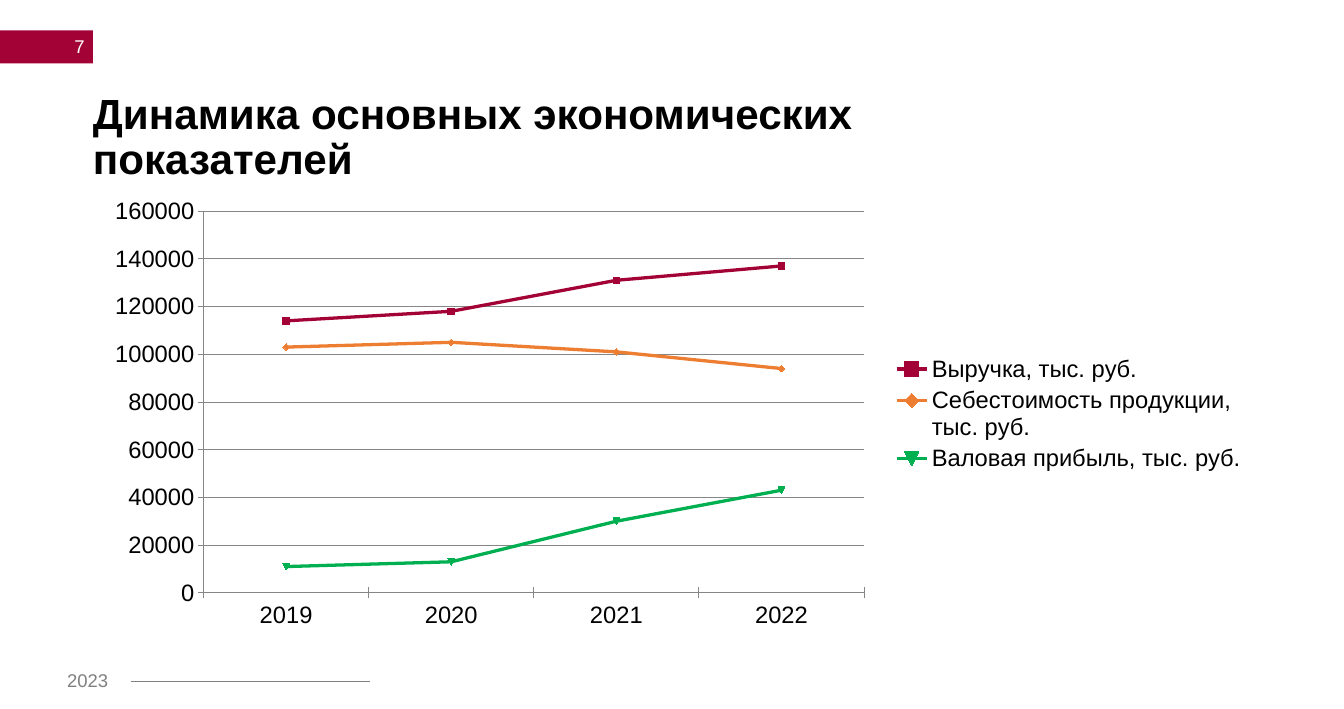
from lxml import etree
from pptx import Presentation
from pptx.chart.data import CategoryChartData
from pptx.dml.color import RGBColor
from pptx.enum.chart import XL_CHART_TYPE, XL_LEGEND_POSITION, XL_TICK_MARK
from pptx.enum.shapes import MSO_CONNECTOR, MSO_SHAPE
from pptx.enum.text import MSO_ANCHOR, PP_ALIGN
from pptx.oxml.ns import qn
from pptx.util import Inches, Pt

LINE_MARKERS = XL_CHART_TYPE.LINE_MARKERS
LEGEND_RIGHT = XL_LEGEND_POSITION.RIGHT
CROSS = XL_TICK_MARK.CROSS
STRAIGHT = MSO_CONNECTOR.STRAIGHT
RECTANGLE = MSO_SHAPE.RECTANGLE
TOP, MIDDLE = MSO_ANCHOR.TOP, MSO_ANCHOR.MIDDLE
LEFT, RIGHT = PP_ALIGN.LEFT, PP_ALIGN.RIGHT

FONT = "Arial"
COLORS = {
    "crimson": "A30236", "orange": "ED7D31", "green": "00B050",
    "gray": "808080", "grid": "868686", "black": "000000", "white": "FFFFFF",
}
WIDTH, HEIGHT = 14.17, 7.48
MARGIN = 0.98  # shared by the page tag, the title and the chart

prs = Presentation()
prs.slide_width, prs.slide_height = Inches(WIDTH), Inches(HEIGHT)
slide = prs.slides.add_slide(prs.slide_layouts[6])


def rgb(name):
    return RGBColor.from_string(COLORS[name])


def add_text(text, left, top, width, height, size=14, color="black", bold=False,
             align=LEFT, anchor=TOP, inset=(0.1, 0.05), spacing=1.0, wrap=True):
    box = slide.shapes.add_textbox(*map(Inches, (left, top, width, height)))
    frame = box.text_frame
    frame.word_wrap = wrap
    frame.vertical_anchor = anchor
    frame.margin_left = frame.margin_right = Inches(inset[0])
    frame.margin_top = frame.margin_bottom = Inches(inset[1])
    paragraph = frame.paragraphs[0]
    paragraph.alignment = align
    paragraph.line_spacing = spacing
    run = paragraph.add_run()
    run.text = text
    run.font.name, run.font.size, run.font.bold = FONT, Pt(size), bold
    run.font.color.rgb = rgb(color)


# Page number tag
page_tag = slide.shapes.add_shape(RECTANGLE, 0, Inches(0.32), Inches(MARGIN), Inches(0.35))
page_tag.shadow.inherit = False
page_tag.fill.solid()
page_tag.fill.fore_color.rgb = rgb("crimson")
page_tag.line.fill.background()
add_text("7", 0.18, 0.29, 0.81, 0.4, color="white", align=RIGHT, anchor=MIDDLE)

# Title
add_text("Динамика основных экономических показателей", MARGIN, 0.98, 10.47, 0.78,
         size=32, bold=True, inset=(0, 0), spacing=0.9)

# Footer year and rule
add_text("2023", 0.61, 7.01, 0.67, 0.34, color="gray", wrap=False)
footer_rule = slide.shapes.add_connector(
    STRAIGHT, Inches(1.38), Inches(7.19), Inches(3.9), Inches(7.19))
footer_rule.line.color.rgb = rgb("gray")
footer_rule.line.width = Pt(1.5)
etree.SubElement(footer_rule._element.spPr, qn("a:effectLst"))

# Chart of economic indicators
indicators = [
    ("Выручка, тыс. руб.", (114000, 118000, 131000, 137000), "crimson"),
    ("Себестоимость продукции, тыс. руб.", (103000, 105000, 101000, 94000), "orange"),
    ("Валовая прибыль, тыс. руб.", (11000, 13000, 30000, 43000), "green"),
]
data = CategoryChartData(number_format="General")
data.categories = ["2019", "2020", "2021", "2022"]
for name, values, _ in indicators:
    data.add_series(name, values)
chart = slide.shapes.add_chart(
    LINE_MARKERS, *map(Inches, (0.97, 1.99, 12.26, 4.75)), data).chart
chart.has_title = False
chart.font.name, chart.font.size = FONT, Pt(18)
chart.font.color.rgb = rgb("black")
chart.plots[0].vary_by_categories = False

for series, (_, _, color) in zip(chart.plots[0].series, indicators):
    series.smooth = False
    series.format.line.width = Pt(2.5)
    series.format.line.color.rgb = rgb(color)
    series.marker.size = 5
    series.marker.format.fill.solid()
    series.marker.format.fill.fore_color.rgb = rgb(color)
    series.marker.format.line.color.rgb = rgb(color)

# Axes and gridlines
value_axis = chart.value_axis
value_axis.minimum_scale, value_axis.maximum_scale = 0, 160000
value_axis.major_unit = 20000
value_axis.has_major_gridlines = True
for axis in (chart.category_axis, value_axis):
    axis.major_tick_mark = CROSS
for ruled in (chart.category_axis, value_axis, value_axis.major_gridlines):
    ruled.format.line.color.rgb = rgb("grid")
    ruled.format.line.width = Pt(0.75)

# Legend, and places of plot and legend as shares of the chart
chart.has_legend = True
chart.legend.position = LEGEND_RIGHT
chart.legend.include_in_layout = False
plot_area = chart._chartSpace.chart.plotArea
for part, index, target, shares in (
        (plot_area, 0, "inner", (0.096, 0.05, 0.568, 0.848)),
        (chart.legend._element, 1, None, (0.69, 0.36, 0.3, 0.28))):
    for old in part.findall(qn("c:layout")):
        part.remove(old)
    layout = etree.Element(qn("c:layout"))
    part.insert(index, layout)
    manual = etree.SubElement(layout, qn("c:manualLayout"))
    if target:
        etree.SubElement(manual, qn("c:layoutTarget"), val=target)
    for mode in ("xMode", "yMode"):
        etree.SubElement(manual, qn("c:" + mode), val="edge")
    for side, share in zip("xywh", shares):
        etree.SubElement(manual, qn("c:" + side), val=str(share))

prs.save("out.pptx")
